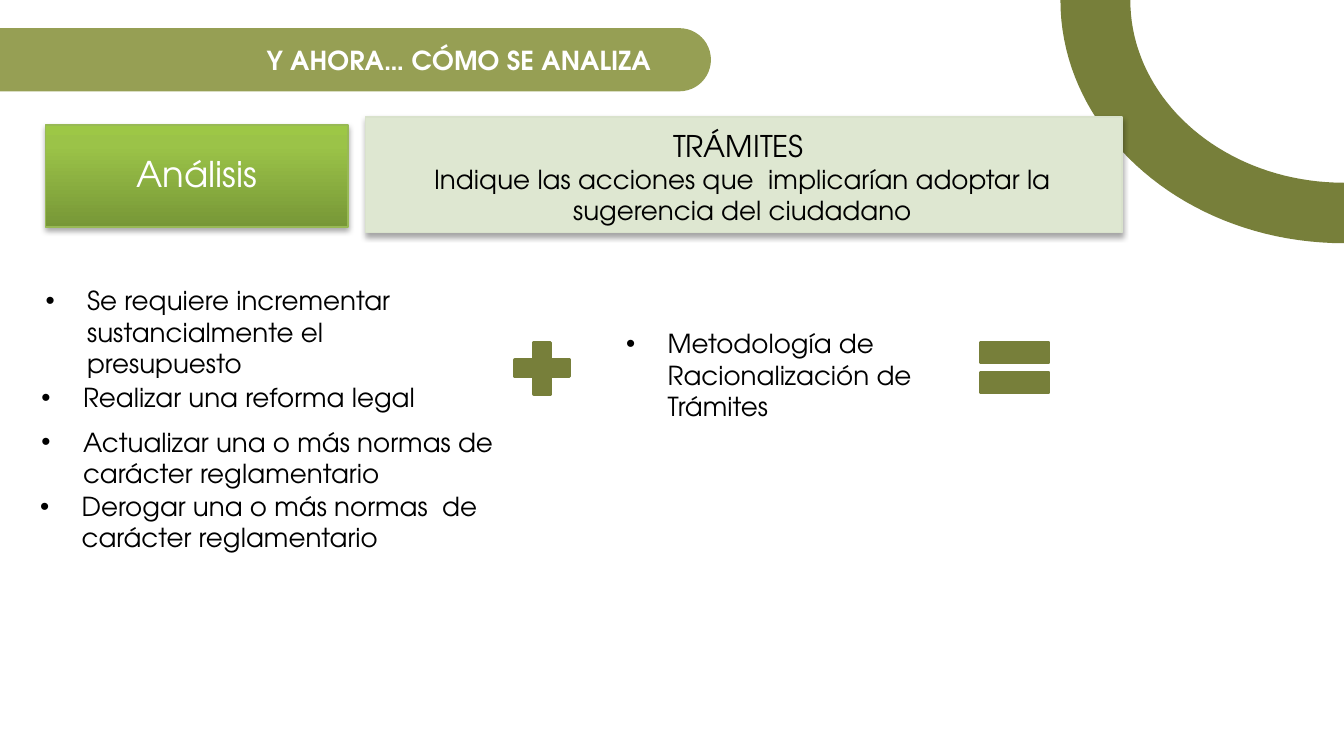
from lxml.etree import SubElement
from pptx import Presentation
from pptx.dml.color import RGBColor
from pptx.enum.shapes import MSO_SHAPE
from pptx.enum.text import MSO_ANCHOR, MSO_AUTO_SIZE, PP_ALIGN
from pptx.oxml import parse_xml
from pptx.oxml.ns import nsdecls, qn
from pptx.util import Inches, Pt

FONT = "TeX Gyre Adventor"
OLIVE, BLACK, WHITE = "777F3A", "000000", "FFFFFF"


def color(hex_value):
    return RGBColor.from_string(hex_value)


def set_values(target, values):
    for name, value in values.items():
        setattr(target, name, value)


def add_block(slide, kind, box, fill, line=None, line_width=0.75):
    block = slide.shapes.add_shape(kind, *map(Inches, box))
    style_block(block, fill, line, line_width)
    return block


def style_block(block, fill, line=None, line_width=0.75):
    block.shadow.inherit = False
    block.fill.solid()
    block.fill.fore_color.rgb = color(fill)
    if line:
        block.line.color.rgb = color(line)
        block.line.width = Pt(line_width)
    else:
        block.line.fill.background()


def add_shadow(block):
    """Cast a soft shadow straight down."""
    effects = block._element.spPr.find(qn("a:effectLst"))
    effects.append(parse_xml(
        f'<a:outerShdw {nsdecls("a")} blurRad="{Pt(3.1)}" dist="{Pt(1.8)}" dir="5400000" '
        'rotWithShape="0"><a:srgbClr val="000000"><a:alpha val="35000"/>'
        '</a:srgbClr></a:outerShdw>'))


def set_gradient(block, stops):
    """Fill upwards, from the first stop at the bottom."""
    stop_xml = "".join(f'<a:gs pos="{position * 1000}"><a:srgbClr val="{hex_value}"/></a:gs>'
                       for position, hex_value in stops)
    properties = block._element.spPr
    properties.replace(properties.find(qn("a:solidFill")), parse_xml(
        f'<a:gradFill {nsdecls("a")} rotWithShape="1"><a:gsLst>{stop_xml}</a:gsLst>'
        '<a:lin ang="16200000" scaled="0"/></a:gradFill>'))


def write_text(shape, lines, hex_value=BLACK, align=PP_ALIGN.LEFT, bold=False, **frame_format):
    """Write (text, size) lines, one per paragraph."""
    frame = shape.text_frame
    set_values(frame, {"word_wrap": True, "vertical_anchor": MSO_ANCHOR.TOP,
                       "auto_size": MSO_AUTO_SIZE.SHAPE_TO_FIT_TEXT} | frame_format)
    for index, (text, size) in enumerate(lines):
        paragraph = frame.paragraphs[0] if index == 0 else frame.add_paragraph()
        paragraph.alignment = align
        run = paragraph.add_run()
        run.text = text
        set_values(run.font, {"name": FONT, "size": Pt(size), "bold": bold})
        run.font.color.rgb = color(hex_value)
    return frame


def add_bullet(slide, text, box, wrap=True):
    item = slide.shapes.add_textbox(*map(Inches, box))
    frame = write_text(item, [(text, 14)], word_wrap=wrap)
    properties = frame.paragraphs[0]._p.get_or_add_pPr()
    properties.set("marL", str(Inches(0.31)))
    properties.set("indent", str(-Inches(0.31)))
    SubElement(properties, qn("a:buFont"), typeface="Arial")
    SubElement(properties, qn("a:buChar"), char="•")


def curve(start, control_1, control_2, end, steps=40):
    """Points along a cubic Bézier curve, given in inches."""
    points = []
    for step in range(steps + 1):
        t = step / steps
        weights = ((1 - t) ** 3, 3 * t * (1 - t) ** 2, 3 * t ** 2 * (1 - t), t ** 3)
        points.append(tuple(
            Inches(sum(w * c for w, c in zip(weights, axis)))
            for axis in zip(start, control_1, control_2, end)))
    return points


def add_corner_arc(slide):
    inner = curve((8.41, 0), (8.41, 0.75), (9.12, 1.36), (10, 1.36))
    outer = curve((10, 1.81), (8.84, 1.81), (7.89, 1), (7.89, 0))
    first, *rest = inner + outer
    builder = slide.shapes.build_freeform(*first)
    builder.add_line_segments(rest, close=True)
    style_block(builder.convert_to_shape(), OLIVE)


def add_headings(slide):
    analysis = add_block(slide, MSO_SHAPE.RECTANGLE, (0.34, 0.93, 2.25, 0.76), "9BC348", "98B955")
    set_gradient(analysis, [(0, "779737"), (80, "9BC348"), (100, "9DC746")])
    add_shadow(analysis)
    frame = write_text(analysis, [("Análisis", 19)], WHITE, PP_ALIGN.CENTER,
                       vertical_anchor=MSO_ANCHOR.MIDDLE, auto_size=MSO_AUTO_SIZE.NONE,
                       margin_left=Inches(0.15), margin_right=Inches(0.15),
                       margin_top=Inches(0.08), margin_bottom=Inches(0.08))
    frame.paragraphs[0].line_spacing = 0.9

    panel = add_block(slide, MSO_SHAPE.RECTANGLE, (2.72, 0.87, 5.63, 0.86), "DEE7D1", "D9E2CC")
    add_shadow(panel)
    procedures = slide.shapes.add_textbox(*map(Inches, (2.83, 0.9, 5.39, 0.84)))
    write_text(procedures, [
        ("TRÁMITES ", 16),
        ("Indique las acciones que  implicarían adoptar la sugerencia del ciudadano", 14),
    ], align=PP_ALIGN.CENTER)

    title = add_block(slide, MSO_SHAPE.ROUNDED_RECTANGLE, (-0.29, 0.21, 5.58, 0.47), "969F54")
    title.adjustments[0] = 0.5
    write_text(title, [("Y AHORA… CÓMO SE ANALIZA ", 14)], WHITE, PP_ALIGN.RIGHT, bold=True,
               margin_right=Inches(0.32))


def main():
    deck = Presentation()
    width = Inches(10)
    set_values(deck, {"slide_width": width, "slide_height": width * 9 // 16})
    slide = deck.slides.add_slide(deck.slide_layouts[6])

    add_corner_arc(slide)
    add_headings(slide)
    add_bullet(slide, "Se requiere incrementar sustancialmente el presupuesto",
               (0.24, 2.07, 3.39, 0.81))
    add_bullet(slide, "Realizar una reforma legal", (0.21, 2.79, 3.02, 0.34), wrap=False)
    add_bullet(slide, "Actualizar una o más normas de carácter reglamentario",
               (0.21, 3.12, 4, 0.57))
    add_bullet(slide, "Derogar una o más normas  de carácter reglamentario",
               (0.2, 3.6, 3.84, 0.57))
    add_block(slide, MSO_SHAPE.MATH_PLUS, (3.76, 2.48, 0.55, 0.52), OLIVE, OLIVE, 2)
    add_bullet(slide, "Metodología de Racionalización de Trámites", (4.56, 2.39, 2.94, 0.81))
    add_block(slide, MSO_SHAPE.MATH_EQUAL, (7.21, 2.42, 0.68, 0.63), OLIVE, OLIVE, 2)
    deck.save("out.pptx")


if __name__ == "__main__":
    main()
